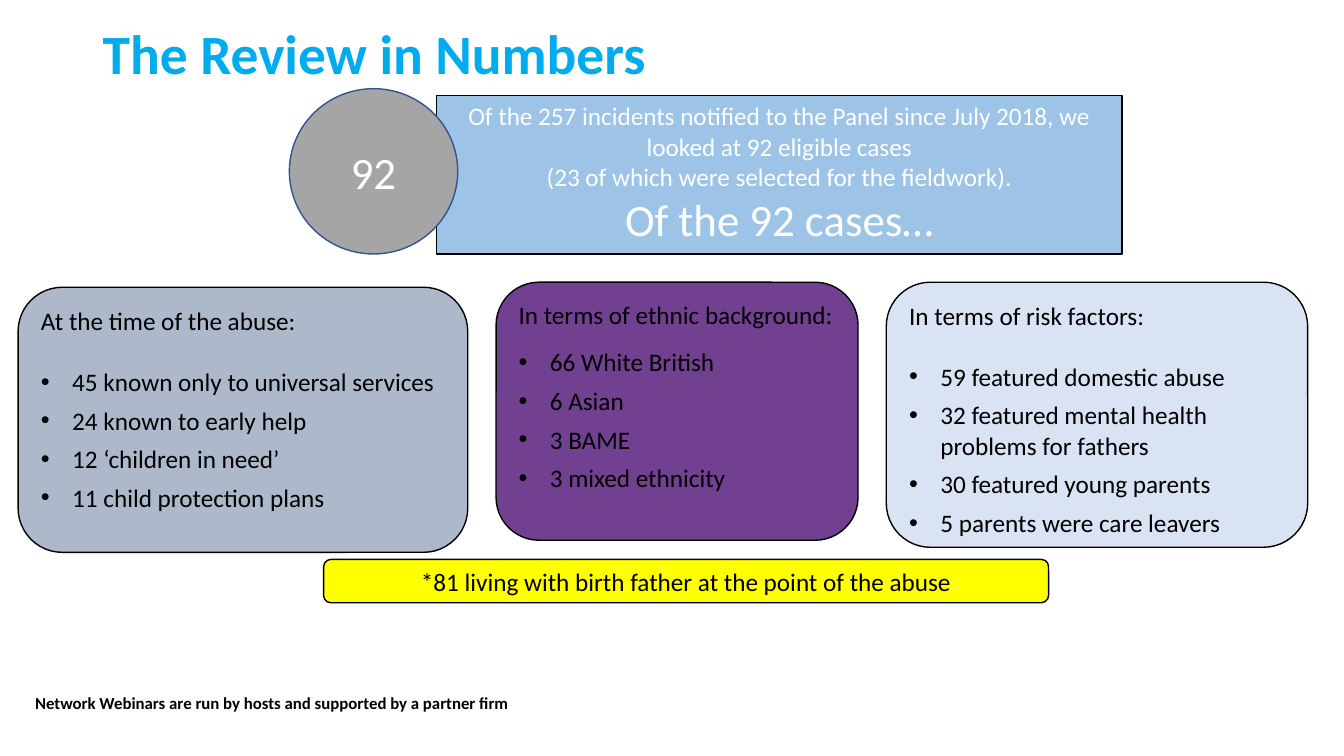
from dataclasses import dataclass

from lxml import etree
from pptx import Presentation
from pptx import util as u
from pptx.dml.color import RGBColor
from pptx.enum import shapes, text
from pptx.oxml.ns import qn

FONT = "Calibri"
BLACK, WHITE = "000000", "FFFFFF"
TOP, MIDDLE = text.MSO_ANCHOR.TOP, text.MSO_ANCHOR.MIDDLE
LEFT, CENTER = text.PP_ALIGN.LEFT, text.PP_ALIGN.CENTER
KIND = shapes.MSO_SHAPE


@dataclass
class Line:
    words: str
    size: float = 18
    color: str = BLACK
    bold: bool = False
    align: text.PP_ALIGN = LEFT
    after: float = 0
    bullet: bool = False
    spacing: float = 1.0


@dataclass
class Box:
    left: float
    top: float
    width: float
    height: float
    lines: list[Line]
    kind: KIND | None = None  # None makes a plain text box
    fill: str = WHITE
    outline: str = BLACK
    anchor: text.MSO_ANCHOR = TOP


@dataclass
class Card:
    left: float
    top: float
    width: float
    height: float
    fill: str
    heading: str
    gap: float
    facts: list[str]


def rgb(value: str) -> RGBColor:
    return RGBColor.from_string(value)


def add_bullet(paragraph) -> None:
    properties = paragraph._p.get_or_add_pPr()
    properties.set("marL", str(u.Inches(0.31)))
    properties.set("indent", str(u.Inches(-0.31)))
    etree.SubElement(properties, qn("a:buFont"), typeface="Arial")
    etree.SubElement(properties, qn("a:buChar"), char="•")


def write_line(paragraph, line: Line) -> None:
    paragraph.text = line.words
    if line.bullet:
        add_bullet(paragraph)
    paragraph.alignment = line.align
    paragraph.space_after = u.Pt(line.after)
    paragraph.line_spacing = line.spacing
    font = paragraph.font
    font.name, font.size, font.bold = FONT, u.Pt(line.size), line.bold
    font.color.rgb = rgb(line.color)


def draw_box(slide, box: Box) -> None:
    place = [u.Inches(n) for n in (box.left, box.top, box.width, box.height)]
    if box.kind is None:
        shape = slide.shapes.add_textbox(*place)
    else:
        shape = slide.shapes.add_shape(box.kind, *place)
        shape.shadow.inherit = False
        shape.fill.solid()
        shape.fill.fore_color.rgb = rgb(box.fill)
        shape.line.color.rgb = rgb(box.outline)
        shape.line.width = u.Pt(1)
    frame = shape.text_frame
    frame.word_wrap = True
    frame.vertical_anchor = box.anchor
    for index, line in enumerate(box.lines):
        write_line(frame.add_paragraph() if index else frame.paragraphs[0], line)


def draw_card(slide, card: Card) -> None:
    lines = [Line(card.heading, after=card.gap)]
    lines += [Line(fact, after=6, bullet=True) for fact in card.facts]
    draw_box(slide, Box(card.left, card.top, card.width, card.height, lines,
                        KIND.ROUNDED_RECTANGLE, card.fill))


FOOTER = Box(0.25, 6.82, 7.44, 0.3, [
    Line("Network Webinars are run by hosts and supported by a partner firm", 12, bold=True)])
BIRTH_FATHER_NOTE = Box(3.21, 5.55, 7.19, 0.43, [
    Line("*81 living with birth father at the point of the abuse", align=CENTER),
], KIND.ROUNDED_RECTANGLE, "FFFF00")
INTRODUCTION = Box(4.33, 0.95, 6.8, 1.57, [
    Line("Of the 257 incidents notified to the Panel since July 2018, we looked at 92 eligible cases",
         color=WHITE, align=CENTER),
    Line("(23 of which were selected for the fieldwork).", color=WHITE, align=CENTER),
    Line("Of the 92 cases…", 32, WHITE, align=CENTER),
], KIND.RECTANGLE, "9DC3E6")
CASE_COUNT = Box(2.87, 0.88, 1.67, 1.64, [Line("92", 32, WHITE, align=CENTER)],
                 KIND.OVAL, "A5A5A5", "325491", MIDDLE)
TITLE = Box(0.92, 0.19, 11.5, 0.75, [
    Line("The Review in Numbers", 39.6, "00ACEE", True, spacing=0.9)], anchor=MIDDLE)

CARDS = [
    Card(0.18, 2.85, 4.46, 2.63, "ADB9CA", "At the time of the abuse:", 22, [
        "45 known only to universal services", "24 known to early help",
        "12 ‘children in need’", "11 child protection plans"]),
    Card(4.92, 2.8, 3.59, 2.56, "724090", "In terms of ethnic background:", 12, [
        "66 White British", "6 Asian", "3 BAME", "3 mixed ethnicity"]),
    Card(8.79, 2.8, 4.18, 2.63, "DAE3F3", "In terms of risk factors:", 22, [
        "59 featured domestic abuse", "32 featured mental health problems for fathers",
        "30 featured young parents", "5 parents were care leavers"]),
]


def main() -> None:
    presentation = Presentation()
    presentation.slide_width = u.Inches(13.33)
    presentation.slide_height = u.Inches(7.5)
    slide = presentation.slides.add_slide(presentation.slide_layouts[6])

    # Footer, note and introduction sit behind the cards
    for box in (FOOTER, BIRTH_FATHER_NOTE, INTRODUCTION):
        draw_box(slide, box)
    # Findings
    for card in CARDS:
        draw_card(slide, card)
    # Case count overlaps the introduction
    for box in (CASE_COUNT, TITLE):
        draw_box(slide, box)

    presentation.save("out.pptx")


if __name__ == "__main__":
    main()
